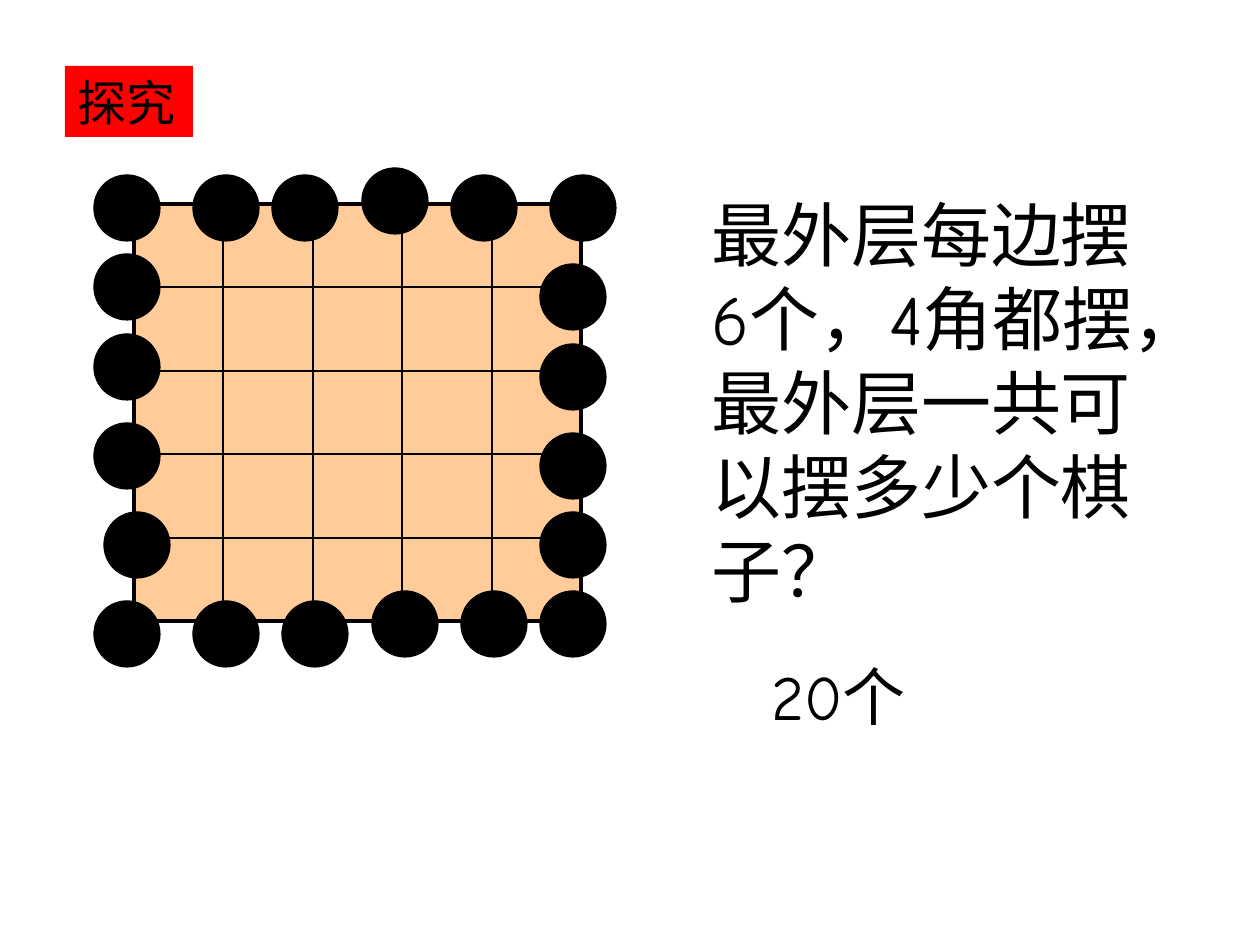
from lxml.etree import SubElement
from pptx import Presentation
from pptx.dml.color import RGBColor
from pptx.enum.shapes import MSO_CONNECTOR, MSO_SHAPE
from pptx.enum.text import MSO_ANCHOR, MSO_AUTO_SIZE, PP_ALIGN
from pptx.oxml.ns import qn
from pptx.util import Emu, Pt

BLACK = RGBColor(0x00, 0x00, 0x00)
RED = RGBColor(0xFF, 0x00, 0x00)
PEACH = RGBColor(0xFF, 0xCC, 0x99)
FONT = "Comic Neue"
SCALE = 914400 / 126


def px(*lengths):
    """Turn pixel lengths into EMU."""
    return [Emu(round(length * SCALE)) for length in lengths]


def write(shape, text, size, anchor=MSO_ANCHOR.TOP):
    frame = shape.text_frame
    frame.word_wrap = True
    frame.auto_size = MSO_AUTO_SIZE.NONE
    frame.vertical_anchor = anchor
    paragraph = frame.paragraphs[0]
    paragraph.alignment = PP_ALIGN.LEFT
    run = paragraph.add_run()
    run.text = text
    run.font.size = Pt(size)
    run.font.name = FONT
    run.font.color.rgb = BLACK


prs = Presentation()
prs.slide_width, prs.slide_height = px(1260, 945)
slide = prs.slides.add_slide(prs.slide_layouts[5])

# Heading
heading = slide.shapes.title
heading.left, heading.top, heading.width, heading.height = px(65, 66, 128, 71)
heading.fill.solid()
heading.fill.fore_color.rgb = RED
write(heading, "探究", 28, MSO_ANCHOR.MIDDLE)

# Board of 5 by 5 cells
CELLS = 5
columns = [134 + round(447 * i / CELLS) for i in range(CELLS + 1)]
rows = [204 + round(417 * i / CELLS) for i in range(CELLS + 1)]
board = slide.shapes.add_group_shape()
for top, bottom in zip(rows, rows[1:]):
    for left, right in zip(columns, columns[1:]):
        cell = board.shapes.add_shape(
            MSO_SHAPE.RECTANGLE, *px(left, top, right - left, bottom - top))
        cell.shadow.inherit = False
        cell.fill.solid()
        cell.fill.fore_color.rgb = PEACH
        cell.line.fill.background()

horizontals = [(columns[0], y, columns[-1], y) for y in rows]
verticals = [(x, rows[0], x, rows[-1]) for x in columns]
for direction in (horizontals, verticals):
    for i, ends in enumerate(direction):
        grid_line = board.shapes.add_connector(MSO_CONNECTOR.STRAIGHT, *px(*ends))
        grid_line.line.color.rgb = BLACK
        grid_line.line.width = Pt(2.25 if i in (0, CELLS) else 1)
        SubElement(grid_line._element.spPr, qn("a:effectLst"))

# Pieces around the edge, by left and top
PIECE = 66
top_side = [(94, 175), (193, 175), (272, 175), (362, 168), (451, 175), (550, 175)]
left_side = [(94, 254), (94, 334), (94, 423), (104, 512)]
bottom_side = [(94, 601), (193, 601), (282, 601), (372, 591), (461, 591), (540, 591)]
right_side = [(540, 264), (540, 344), (540, 433), (540, 512)]
pieces = slide.shapes.add_group_shape()
for left, top in top_side + left_side + bottom_side + right_side:
    piece = pieces.shapes.add_shape(MSO_SHAPE.OVAL, *px(left, top, PIECE, PIECE))
    piece.shadow.inherit = False
    piece.fill.solid()
    piece.fill.fore_color.rgb = BLACK
    piece.line.color.rgb = BLACK
    piece.line.width = Pt(0.75)

# Question and answer
question = slide.shapes.add_textbox(*px(699, 185, 476, 432))
write(question, "最外层每边摆6个，4角都摆，最外层一共可以摆多少个棋子？", 40)
answer = slide.shapes.add_textbox(*px(759, 651, 267, 88))
write(answer, "20个", 36)

prs.save("out.pptx")
